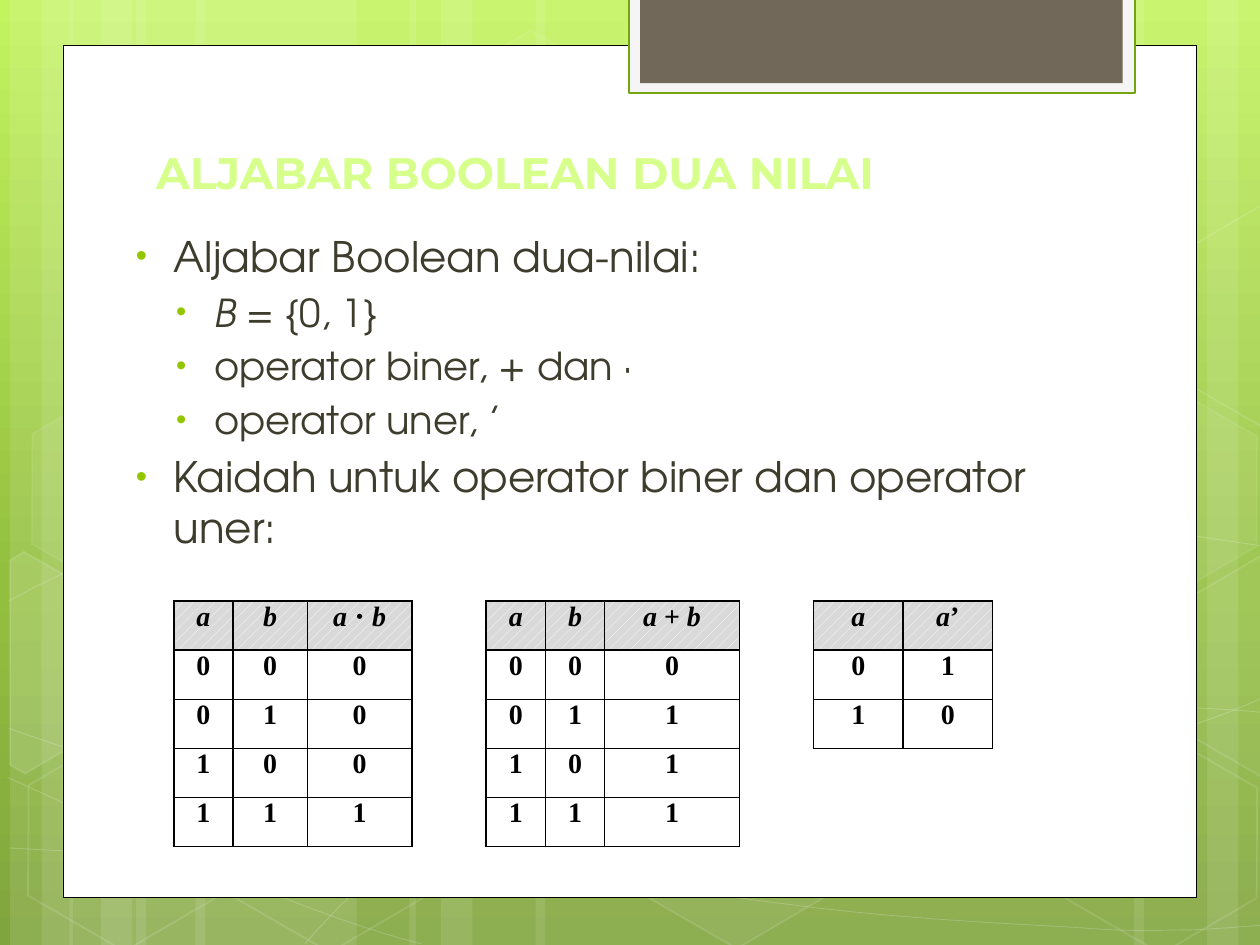
from copy import deepcopy
from pptx import Presentation
from pptx.dml.color import RGBColor
from pptx.enum.dml import MSO_PATTERN
from pptx.enum.shapes import MSO_SHAPE
from pptx.enum.text import MSO_ANCHOR, PP_ALIGN
from pptx.oxml.ns import qn
from pptx.util import Inches, Pt
from lxml import etree

RECT, HEXAGON = MSO_SHAPE.RECTANGLE, MSO_SHAPE.HEXAGON
HEADING, BODY, SERIF = "Montserrat", "TeX Gyre Adventor", "Times New Roman"
WHITE, BLACK, GREEN, INK = "FFFFFF", "000000", "94C600", "3E3D2D"
NO_STYLE = "{2D5ABB26-0587-4C30-8999-92F81FD0307C}"

# Content
TITLE = "ALJABAR BOOLEAN DUA NILAI"
# (level, [(text, italic)])
BULLETS = [
    (0, [("Aljabar Boolean dua-nilai:", False)]),
    (1, [("B", True), (" = {0, 1}", False)]),
    (1, [("operator biner, + dan ⋅", False)]),
    (1, [("operator uner, ’", False)]),
    (0, [("Kaidah untuk operator biner dan operator uner:", False)]),
]
LEVELS = [(24, 0.37), (22, 0.69)]  # size, left margin
HEADER = [["a"], ["b"], ["a ", "⋅", " b"], [], ["a"], ["b"], ["a", " + ", "b"],
          [], ["a"], ["a", "’"]]
ROWS = ["000 000 01", "010 011 10", "100 101   ", "111 111   "]
COLS = [0.47, 0.59, 0.83, 0.59, 0.47, 0.47, 1.07, 0.59, 0.71, 0.71]

# Background decoration
BACKGROUND = [(0, "C3F35F"), (0.62, "93BF3F"), (1, "81A53E")]
STRIPES = [(1.08, 1.75), (0.08, 0.5), (0.33, 0.83), (1.55, 1.75), (0.55, 0.5),
           (0.8, 0.83), (7.33, 1.75), (9.58, 0.5), (9, 0.83), (4.25, 3.08),
           (3.25, 0.5), (3.5, 0.83)]  # left, width
# Start point, then Bezier segments of three points each
CURVES = [
    [(0.07, 6.73), (0.61, 6.76), (1.15, 6.79), (1.9, 6.78), (2.65, 6.77), (3.58, 6.75),
     (4.58, 6.65), (5.58, 6.55), (7, 6.36), (7.92, 6.17), (8.83, 5.98), (9.77, 5.68),
     (10.07, 5.51)],
    [(0.07, 4.77), (0.36, 4.61), (0.65, 4.46), (1.21, 4.31), (1.78, 4.16), (2.59, 3.94),
     (3.47, 3.87), (4.36, 3.8), (5.44, 3.79), (6.54, 3.87), (7.64, 3.95), (9.47, 4.26),
     (10.07, 4.34)],
    [(0.06, 6.17), (1.27, 6.72), (2.47, 7.27), (3.34, 7.49)],
    [(0.07, 5.78), (0.38, 5.89), (0.7, 6), (1.28, 6.16), (1.86, 6.31), (2.73, 6.56),
     (3.57, 6.73), (4.4, 6.9), (5.45, 7.08), (6.28, 7.18), (7.11, 7.29), (8, 7.33),
     (8.53, 7.36), (9.05, 7.4), (9.19, 7.38), (9.45, 7.38), (9.71, 7.37), (9.89, 7.35),
     (10.07, 7.34)],
    [(2.42, 7.49), (2.6, 7.29), (2.78, 7.09), (3.02, 6.91), (3.26, 6.73), (3.6, 6.53),
     (3.88, 6.39), (4.16, 6.25), (4.33, 6.19), (4.7, 6.09), (5.06, 5.99), (5.73, 5.85),
     (6.08, 5.78), (6.44, 5.71), (6.49, 5.71), (6.8, 5.69), (7.11, 5.66), (7.6, 5.63),
     (7.94, 5.62), (8.29, 5.61), (8.86, 5.62), (8.86, 5.62), (9.08, 5.62), (9.31, 5.62),
     (9.53, 5.62), (9.71, 5.63), (9.88, 5.64), (9.97, 5.65), (10.06, 5.66), (10.03, 5.65),
     (10.06, 5.66)],
]
# left, top, fill opacity, line opacity
HEXAGONS = [(3.34, 0.36, 4, 8), (4.97, 5.89, 6, 12), (0.11, 5.91, 0, 12),
            (0.14, 3.12, 7, 8), (1.74, 5.92, 0, 12), (7.53, 4.53, 10, 12),
            (8.34, 5.93, 0, 12), (8.34, 3.14, 7, 8)]
# Hexagons cut off by the slide edge: points, fill opacity
CUT_HEXAGONS = [
    ([(0.08, 4.45), (0.19, 4.38), (0.96, 4.82), (0.95, 5.7), (0.2, 6.14), (0.08, 6.07)], 10),
    ([(9.26, 4.85), (10.01, 4.41), (10.09, 4.46), (10.09, 6.13), (10.02, 6.17),
      (9.26, 5.73)], 4),
    ([(9.26, 2.07), (10.01, 1.63), (10.1, 1.68), (10.09, 3.35), (10.02, 3.39),
      (9.26, 2.95)], 0),
]


def rgb(color):
    return RGBColor.from_string(color)


def paint(fill, color, opacity=100):
    """Solid fill with opacity in percent; 0 means no fill."""
    if not opacity:
        fill.background()
        return
    fill.solid()
    fill.fore_color.rgb = rgb(color)
    if opacity < 100:
        clr = fill._xPr.find(qn("a:solidFill"))[0]
        etree.SubElement(clr, qn("a:alpha"), val=str(opacity * 1000))


def style(sp, fill=WHITE, opacity=100, line=None, width=1, line_opacity=100):
    sp.shadow.inherit = False
    paint(sp.fill, fill, opacity)
    paint(sp.line.fill, line or WHITE, line_opacity if line else 0)
    if line:
        sp.line.width = Pt(width)


def add_box(s, kind, x, y, w, h, **look):
    sp = s.shapes.add_shape(kind, Inches(x), Inches(y), Inches(w), Inches(h))
    style(sp, **look)
    return sp


def add_outline(s, points, close, **look):
    points = [(Inches(x), Inches(y)) for x, y in points]
    fb = s.shapes.build_freeform(*points[0])
    fb.add_line_segments(points[1:], close=close)
    sp = fb.convert_to_shape()
    style(sp, **look)
    return sp


def bend(sp):
    """Turn every three line segments into one Bezier segment."""
    outline = sp._element.find(".//" + qn("a:pathLst"))[0]
    lines = outline.findall(qn("a:lnTo"))
    for i in range(0, len(lines), 3):
        curve = etree.SubElement(outline, qn("a:cubicBezTo"))
        for line in lines[i:i + 3]:
            curve.append(line[0])
            outline.remove(line)


def add_run(p, text, font, size, color, bold=False, italic=False):
    r = p.add_run()
    r.text = text
    f = r.font
    f.name, f.size, f.bold, f.italic = font, Pt(size), bold, italic
    f.color.rgb = rgb(color)


def add_text(s, x, y, w, h, anchor):
    tf = s.shapes.add_textbox(Inches(x), Inches(y), Inches(w), Inches(h)).text_frame
    tf.word_wrap, tf.vertical_anchor = True, anchor
    return tf


def add_bullet(p, margin):
    pPr = p._p.get_or_add_pPr()
    pPr.set("marL", str(Inches(margin)))
    pPr.set("indent", str(Inches(-0.3)))
    clr = etree.SubElement(pPr, qn("a:buClr"))
    etree.SubElement(clr, qn("a:srgbClr"), val=GREEN)
    etree.SubElement(pPr, qn("a:buSzPct"), val="76000")
    etree.SubElement(pPr, qn("a:buFont"), typeface="Arial")
    etree.SubElement(pPr, qn("a:buChar"), char="•")


def add_borders(cell, sides):
    tcPr = cell._tc.get_or_add_tcPr()
    for i, side in enumerate("LRTB"):
        ln = etree.Element(qn("a:ln" + side), w=str(Pt(1)))
        if side in sides:
            fill = etree.SubElement(ln, qn("a:solidFill"))
            etree.SubElement(fill, qn("a:srgbClr"), val=BLACK)
        else:
            etree.SubElement(ln, qn("a:noFill"))
        tcPr.insert(i, ln)


prs = Presentation()
prs.slide_width, prs.slide_height = Inches(10), Inches(7.5)
s = prs.slides.add_slide(prs.slide_layouts[6])

# Background gradient
bg = s.background.fill
bg.gradient()
bg.gradient_angle = 270
stops = s._element.find(".//" + qn("a:gsLst"))
stops.append(deepcopy(stops[-1]))
for stop, (position, color) in zip(bg.gradient_stops, BACKGROUND):
    stop.position, stop.color.rgb = position, rgb(color)

# Stripes, curves and hexagons
for x, w in STRIPES:
    add_box(s, RECT, x, 0, w, 7.5, opacity=10)
for points in CURVES:
    bend(add_outline(s, points, False, opacity=0, line=WHITE, width=0.5, line_opacity=20))
for x, y, opacity, line_opacity in HEXAGONS:
    sp = add_box(s, HEXAGON, x, y, 1.75, 1.52, opacity=opacity, line=WHITE,
                 line_opacity=line_opacity)
    sp.rotation = 30
    sp.adjustments[0], sp.adjustments[1] = 0.285, 1.155
for points, opacity in CUT_HEXAGONS:
    add_outline(s, points, True, opacity=opacity, line=WHITE, line_opacity=12)

# White page and top tab
add_box(s, RECT, 0.5, 0.36, 9, 6.76, line=BLACK, width=0.5)
add_box(s, RECT, 4.99, -0.02, 4.02, 0.76, fill="F5F5F5", line="74A510", width=1.25)
add_box(s, RECT, 5.08, -0.02, 3.83, 0.68, fill="71685A")

# Title and bullets
tf = add_text(s, 1.14, 1.12, 7.68, 0.5, MSO_ANCHOR.BOTTOM)
add_run(tf.paragraphs[0], TITLE, HEADING, 25.2, "D6FF8C", bold=True)
tf = add_text(s, 0.91, 1.78, 7.41, 3.84, MSO_ANCHOR.TOP)
for i, (level, runs) in enumerate(BULLETS):
    p = tf.add_paragraph() if i else tf.paragraphs[0]
    size, margin = LEVELS[level]
    p.level, p.space_before = level, Pt(size * 0.2)
    add_bullet(p, margin)
    for text, italic in runs:
        add_run(p, text, BODY, size, INK, italic=italic)

# Truth tables: one grid with empty columns between them
grid = [HEADER] + [[[c] if c != " " else [] for c in row] for row in ROWS]
table = s.shapes.add_table(len(grid), len(COLS), Inches(1.38), Inches(4.77),
                           Inches(sum(COLS)), Inches(0.39 * len(grid))).table
table.first_row = table.horz_banding = False
table._tbl.tblPr.find(qn("a:tableStyleId")).text = NO_STYLE
for col, w in zip(table.columns, COLS):
    col.width = Inches(w)
for i, row in enumerate(grid):
    table.rows[i].height = Inches(0.39)
    for j, parts in enumerate(row):
        cell = table.cell(i, j)
        cell.margin_left = cell.margin_right = Inches(0.07)
        cell.margin_top = cell.margin_bottom = 0
        cell.fill.background()
        if i == 0 and parts:
            cell.fill.patterned()
            cell.fill.pattern = MSO_PATTERN.PERCENT_20
            cell.fill.fore_color.rgb, cell.fill.back_color.rgb = rgb(WHITE), rgb("D9D9D9")
        near = [("L", i, j - 1), ("R", i, j + 1), ("T", i - 1, j)]
        add_borders(cell, "LRTB" if parts else [
            side for side, y, x in near if y >= 0 and x < len(row) and grid[y][x]])
        p = cell.text_frame.paragraphs[0]
        p.alignment = PP_ALIGN.CENTER
        for part in parts:
            add_run(p, part, SERIF, 16, BLACK, bold=True, italic=part.strip() in ("a", "b"))

prs.save("out.pptx")
